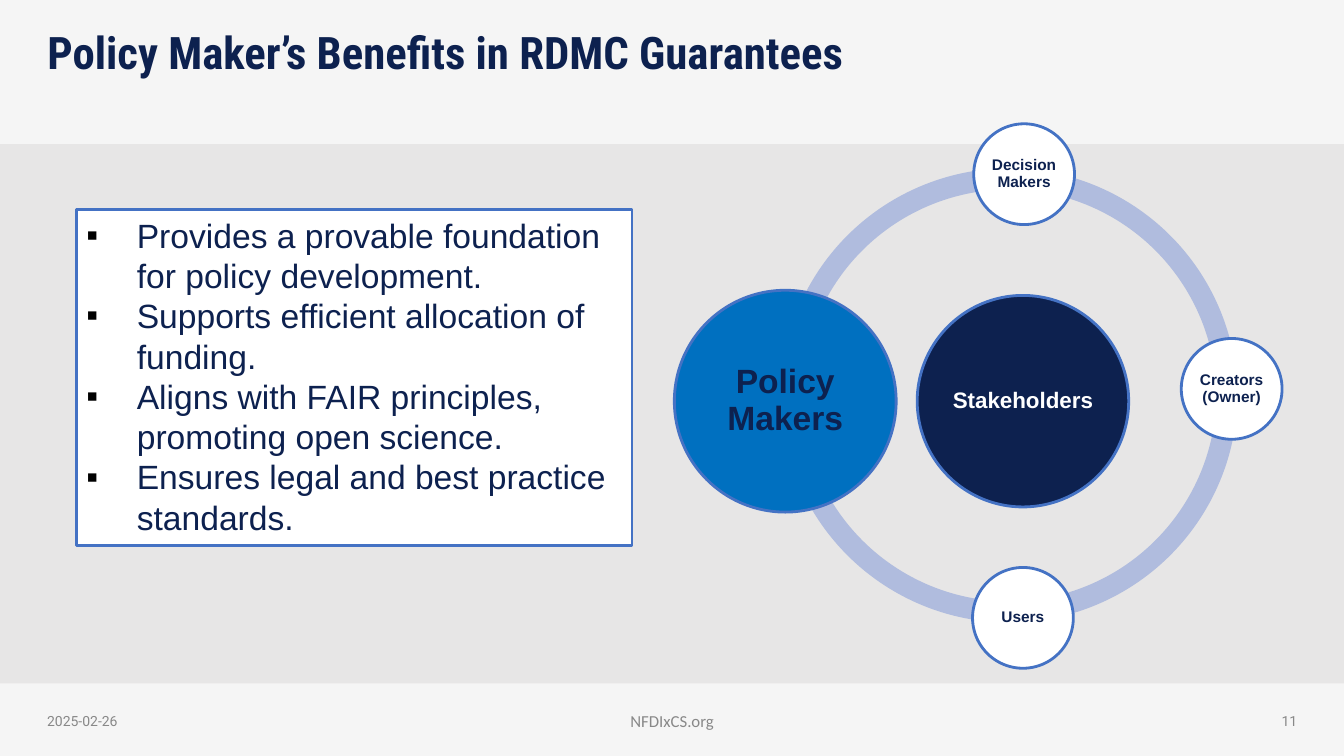
from dataclasses import dataclass

from lxml.etree import SubElement
from pptx import Presentation
from pptx.dml.color import RGBColor
from pptx.enum.shapes import MSO_SHAPE
from pptx.enum.text import MSO_ANCHOR, MSO_AUTO_SIZE, PP_ALIGN
from pptx.oxml.ns import qn
from pptx.shapes.autoshape import Shape
from pptx.text.text import _Paragraph as Para
from pptx.util import Cm, Pt

NAVY = RGBColor(0x0D, 0x21, 0x4F)
BLUE = RGBColor(0x00, 0x70, 0xC0)
EDGE = RGBColor(0x44, 0x72, 0xC4)
RING = RGBColor(0xB0, 0xBC, 0xDE)
GREY = RGBColor(0x88, 0x88, 0x88)
BACK = RGBColor(0xE7, 0xE6, 0xE6)
WHITE = RGBColor(0xFF, 0xFF, 0xFF)
WIDE, HIGH = 33.87, 19.05
RING_SIZE = 11.58


@dataclass
class Disc:
    """A labelled circle, placed by its centre."""
    label: str
    x: float
    y: float
    size: float
    fill: RGBColor
    ink: RGBColor
    points: int


@dataclass
class Arc:
    """A ring part with its start and end in degrees."""
    left: float
    top: float
    start: float
    end: float


@dataclass
class Note:
    """A text in the footer."""
    text: str
    left: float
    width: float
    align: PP_ALIGN
    font: str
    points: int


DISCS = [
    Disc("Stakeholders", 25.78, 10.11, 5.33, NAVY, WHITE, 16),
    Disc("Users", 25.78, 15.57, 2.54, WHITE, NAVY, 11),
    Disc("Policy Makers", 19.79, 10.11, 5.59, BLUE, NAVY, 24),
    Disc("Decision Makers", 25.81, 4.39, 2.54, WHITE, NAVY, 11),
    Disc("Creators (Owner)", 31.04, 9.8, 2.54, WHITE, NAVY, 11),
]
ARCS = [
    Arc(19.61, 4.11, 358.86, 86.05),
    Arc(19.61, 4.24, 274.13, 357.62),
    Arc(19.66, 4.24, 179.22, 273.57),
    Arc(19.66, 4.11, 86.61, 177.9),
]
NOTES = [
    Note("2025-02-26", 0.94, 7.62, PP_ALIGN.LEFT, "Roboto", 10),
    Note("11", 25.32, 7.62, PP_ALIGN.RIGHT, "Roboto", 10),
    Note("NFDIxCS.org", 9.5, 14.88, PP_ALIGN.CENTER, "Calibri", 12),
]
GAINS = [
    "Provides a provable foundation for policy development.",
    "Supports efficient allocation of funding.",
    "Aligns with FAIR principles, promoting open science.",
    "Ensures legal and best practice standards.",
]


def style(para: Para, name: str, points: int, ink: RGBColor, bold: bool = False) -> None:
    """Set the font of a paragraph."""
    font = para.font
    font.name, font.size, font.bold = name, Pt(points), bold
    font.color.rgb = ink


def add_form(shapes, kind: MSO_SHAPE, left: float, top: float, width: float,
             height: float, fill: RGBColor, edge: bool = False) -> Shape:
    """Add a plain filled shape, with or without an edge."""
    form = shapes.add_shape(kind, Cm(left), Cm(top), Cm(width), Cm(height))
    form.shadow.inherit = False
    form.fill.solid()
    form.fill.fore_color.rgb = fill
    if edge:
        form.line.color.rgb = EDGE
        form.line.width = Pt(2)
    else:
        form.line.fill.background()
    return form


def add_band(shapes, top: float, height: float) -> None:
    """Add a translucent white band across the slide."""
    band = add_form(shapes, MSO_SHAPE.RECTANGLE, 0, top, WIDE, height, WHITE)
    tint = band.fill._xPr.find(qn("a:solidFill"))[0]
    SubElement(tint, qn("a:alpha"), val="60000")


def add_arc(shapes, arc: Arc) -> None:
    """Add one part of the ring."""
    form = add_form(shapes, MSO_SHAPE.BLOCK_ARC, arc.left, arc.top,
                    RING_SIZE, RING_SIZE, RING)
    for spot, value in enumerate((arc.start * 0.6, arc.end * 0.6, 0.046)):
        form.adjustments[spot] = value


def add_disc(shapes, disc: Disc) -> None:
    """Add a circle with its label."""
    half = disc.size / 2
    form = add_form(shapes, MSO_SHAPE.OVAL, disc.x - half, disc.y - half,
                    disc.size, disc.size, disc.fill, True)
    frame = form.text_frame
    frame.word_wrap = True
    frame.vertical_anchor = MSO_ANCHOR.MIDDLE
    frame.margin_left = frame.margin_right = Cm(0.05)
    frame.margin_top = frame.margin_bottom = Cm(0.05)
    para = frame.paragraphs[0]
    para.text = disc.label
    para.alignment = PP_ALIGN.CENTER
    para.line_spacing = 0.9
    style(para, "Arial", disc.points, disc.ink, True)


def add_note(shapes, note: Note) -> None:
    """Add a footer text."""
    box = shapes.add_textbox(Cm(note.left), Cm(17.65), Cm(note.width), Cm(1.02))
    frame = box.text_frame
    frame.word_wrap = True
    frame.vertical_anchor = MSO_ANCHOR.MIDDLE
    para = frame.paragraphs[0]
    para.text = note.text
    para.alignment = note.align
    style(para, note.font, note.points, GREY)


def add_gains(shapes) -> None:
    """Add the framed list of benefits."""
    box = add_form(shapes, MSO_SHAPE.RECTANGLE, 1.93, 5.28, 14, 8.46, WHITE, True)
    frame = box.text_frame
    frame.word_wrap = True
    frame.vertical_anchor = MSO_ANCHOR.TOP
    for spot, gain in enumerate(GAINS):
        para = frame.add_paragraph() if spot else frame.paragraphs[0]
        para.text = gain
        para.alignment = PP_ALIGN.LEFT
        props = para._p.get_or_add_pPr()
        props.set("marL", str(Cm(1.27)))
        props.set("indent", str(-Cm(1.27)))
        tint = SubElement(props, qn("a:buClr"))
        SubElement(tint, qn("a:srgbClr"), val="000000")
        SubElement(props, qn("a:buFont"), typeface="Arial")
        SubElement(props, qn("a:buChar"), char="▪")
        style(para, "Arial", 24, NAVY)


def set_title(title: Shape) -> None:
    """Place and format the title."""
    title.left, title.top = Cm(0.94), Cm(0.66)
    title.width, title.height = Cm(32), Cm(2.97)
    frame = title.text_frame
    frame.auto_size = MSO_AUTO_SIZE.NONE
    frame.vertical_anchor = MSO_ANCHOR.TOP
    para = frame.paragraphs[0]
    para.text = "Policy Maker’s Benefits in RDMC Guarantees"
    para.alignment = PP_ALIGN.LEFT
    para.line_spacing = 0.9
    style(para, "Roboto Condensed", 32, NAVY, True)


def main() -> None:
    """Build and save the slide."""
    deck = Presentation()
    deck.slide_width, deck.slide_height = Cm(WIDE), Cm(HIGH)
    slide = deck.slides.add_slide(deck.slide_layouts[5])
    slide.background.fill.solid()
    slide.background.fill.fore_color.rgb = BACK
    shapes = slide.shapes
    add_band(shapes, 17.22, HIGH - 17.22)
    add_band(shapes, 0, 3.63)
    set_title(shapes.title)
    shapes._spTree.append(shapes.title._element)
    for note in NOTES:
        add_note(shapes, note)
    add_gains(shapes)
    wheel = shapes.add_group_shape().shapes
    for arc in ARCS:
        add_arc(wheel, arc)
    for disc in DISCS:
        add_disc(wheel, disc)
    deck.save("out.pptx")


if __name__ == "__main__":
    main()
